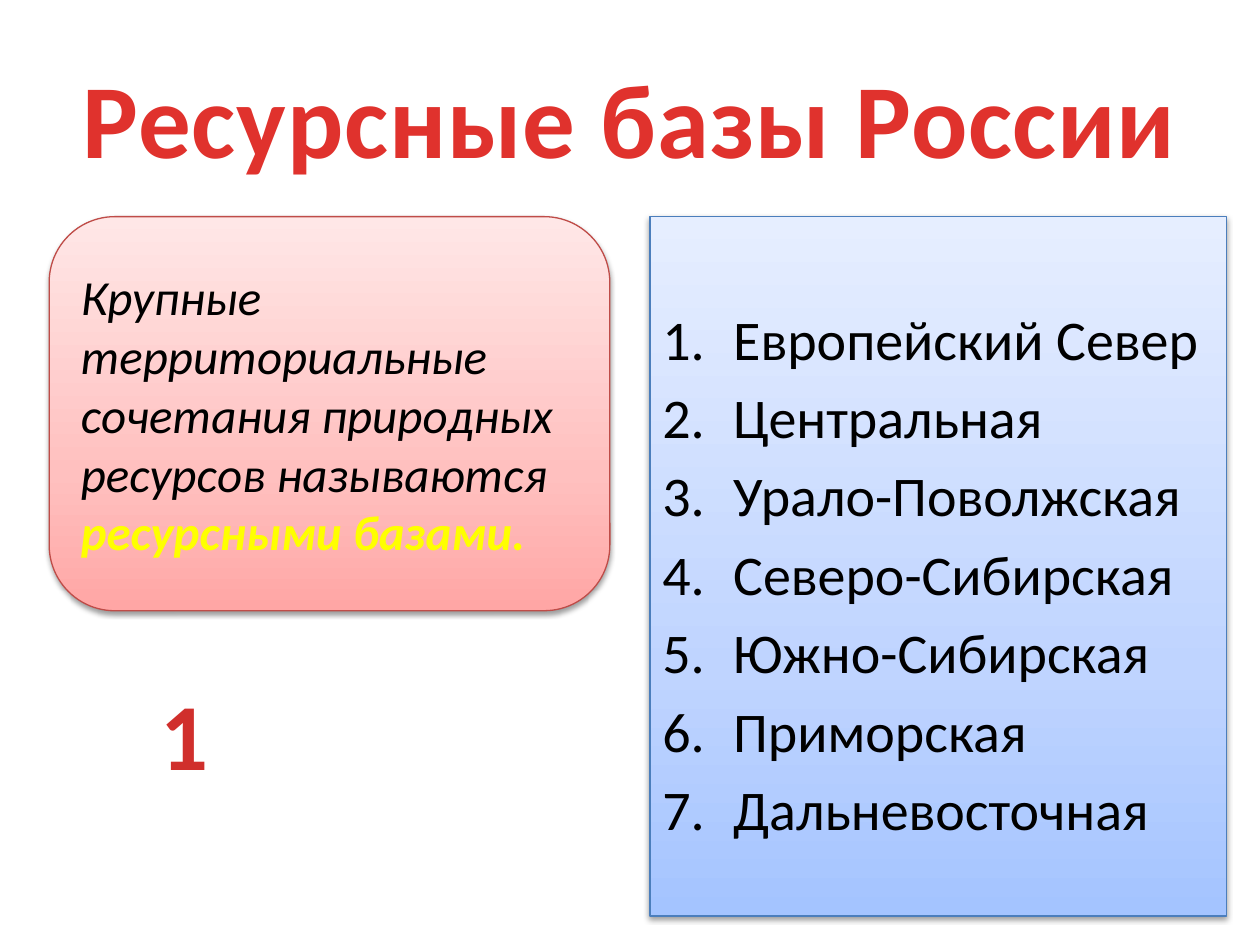
from lxml import etree
from pptx import Presentation
from pptx import util as u
from pptx.dml.color import RGBColor
from pptx.enum import shapes, text
from pptx.oxml import parse_xml
from pptx.oxml.ns import nsdecls, qn

REGIONS = [
    "Европейский Север", "Центральная", "Урало-Поволжская", "Северо-Сибирская",
    "Южно-Сибирская", "Приморская", "Дальневосточная",
]
BLUES = ((0, "A4C4FF"), (35, "BFD4FF"), (100, "E6EEFF"))
REDS = ((0, "FFA6A5"), (35, "FFC0BF"), (100, "FFE7E7"))


def rgb(value):
    return RGBColor.from_string(value)


def apply(target, values):
    for name, value in values.items():
        setattr(target, name, value)


class SlideBuilder:
    font = "Calibri"
    border = u.Pt(0.75)

    def __init__(self, slide):
        self.slide = slide

    def run(self, paragraph, wording, size, color, spacing=None, **style):
        run = paragraph.add_run()
        run.text = wording
        apply(run.font, {"name": self.font, "size": u.Pt(size), **style})
        run.font.color.rgb = rgb(color)
        if spacing:
            run._r.get_or_add_rPr().set("spc", str(round(spacing * 100)))

    def label(self, box, wording, size, color, wrap=True, **style):
        frame = self.slide.shapes.add_textbox(*map(u.Pt, box)).text_frame
        apply(frame, {"word_wrap": wrap, "vertical_anchor": text.MSO_ANCHOR.MIDDLE})
        heading = frame.paragraphs[0]
        heading.alignment = text.PP_ALIGN.CENTER
        self.run(heading, wording, size, color, bold=True, **style)

    def panel(self, kind, box, stops, outline, **layout):
        panel = self.slide.shapes.add_shape(kind, *map(u.Pt, box))
        panel.line.color.rgb = rgb(outline)
        panel.line.width = self.border
        self.gradient(panel, stops)
        self.shadow(panel)
        apply(panel.text_frame, {"word_wrap": True, **layout})
        return panel.text_frame

    def gradient(self, panel, stops):
        panel.fill.gradient()
        panel.fill.gradient_angle = 90
        stop_list = panel._element.spPr.find(qn("a:gradFill")).find(qn("a:gsLst"))
        for stop in list(stop_list):
            stop_list.remove(stop)
        for position, color in stops:
            stop = etree.SubElement(stop_list, qn("a:gs"), pos=str(position * 1000))
            etree.SubElement(stop, qn("a:srgbClr"), val=color)

    def shadow(self, panel):
        panel.shadow.inherit = False
        effects = panel._element.spPr.find(qn("a:effectLst"))
        effects.append(parse_xml(
            f'<a:outerShdw {nsdecls("a")} blurRad="{u.Pt(3.1)}" dist="{u.Pt(1.6)}" '
            'dir="5400000" rotWithShape="0"><a:srgbClr val="000000">'
            '<a:alpha val="38000"/></a:srgbClr></a:outerShdw>'))

    def numbered(self, frame, items, size, color, indent):
        for index, item in enumerate(items):
            entry = frame.add_paragraph() if index else frame.paragraphs[0]
            apply(entry, {"alignment": text.PP_ALIGN.LEFT, "space_after": u.Pt(size * 0.2)})
            properties = entry._p.get_or_add_pPr()
            properties.set("marL", str(u.Pt(indent)))
            properties.set("indent", str(-u.Pt(indent)))
            etree.SubElement(properties, qn("a:buFont"), typeface="+mj-lt")
            etree.SubElement(properties, qn("a:buAutoNum"), type="arabicPeriod")
            self.run(entry, item, size, color)


def main():
    deck = Presentation()
    deck.slide_width, deck.slide_height = u.Pt(720), u.Pt(540)
    builder = SlideBuilder(deck.slides.add_slide(deck.slide_layouts[6]))

    builder.label((36, 21.6, 648, 90), "Ресурсные базы России", 60, "E0322D", spacing=0.5)

    regions = builder.panel(
        shapes.MSO_SHAPE.RECTANGLE, (371.4, 123.8, 329.6, 399.6), BLUES, "4B7EBC",
        vertical_anchor=text.MSO_ANCHOR.TOP, margin_top=u.Pt(50))
    builder.numbered(regions, REGIONS, 32, "000000", 40.5)

    definition = builder.panel(
        shapes.MSO_SHAPE.ROUNDED_RECTANGLE, (28.1, 123.8, 320.4, 225.2), REDS, "BF4C48",
        vertical_anchor=text.MSO_ANCHOR.MIDDLE).paragraphs[0]
    definition.alignment = text.PP_ALIGN.LEFT
    builder.run(definition, "Крупные территориальные сочетания природных ресурсов называются ",
                28, "000000", italic=True)
    builder.run(definition, "ресурсными базами.", 28, "FFFF00", italic=True, bold=True)

    builder.label((84.2, 382.3, 42.5, 72.7), "1", 54, "D02F2C", wrap=False)

    deck.save("out.pptx")


if __name__ == "__main__":
    main()
